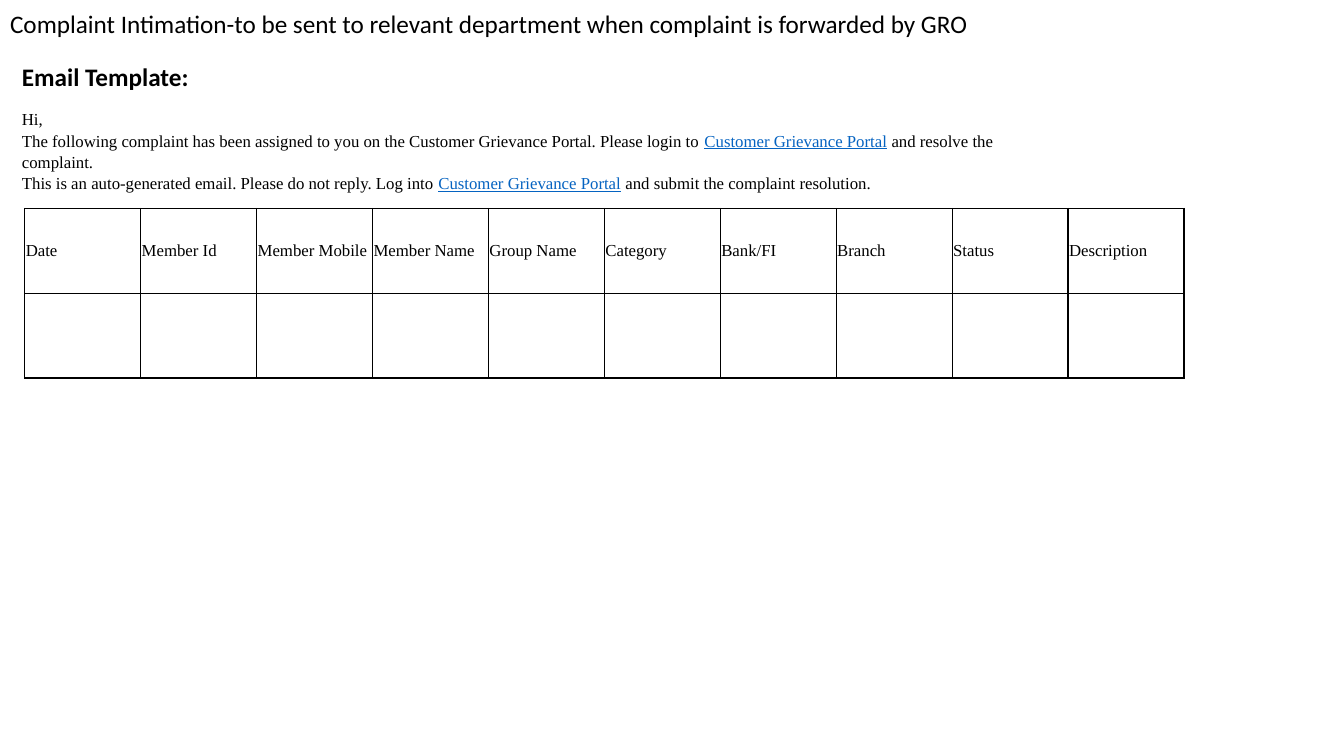
from pptx import Presentation
from pptx.dml.color import RGBColor
from pptx.enum.text import MSO_ANCHOR as Anchor, MSO_AUTO_SIZE as AutoSize, PP_ALIGN as Align
from pptx.oxml import parse_xml
from pptx.oxml.ns import nsdecls
from pptx.util import Pt

BLACK, LINK_BLUE = "000000", "0563C1"
HEADING_FONT, BODY_FONT = "Calibri", "Times New Roman"
PORTAL = "Customer Grievance Portal"
EMAIL = [
    ["Hi,"],
    ["The following complaint has been assigned to you on the Customer Grievance Portal. "
     "Please login to ", PORTAL, "\N{NO-BREAK SPACE}and resolve the complaint."],
    ["This is an auto-generated email. Please do not reply. Log into ", PORTAL,
     " and submit the complaint resolution."],
]
COLUMNS = ["Date", "Member Id", "Member Mobile", "Member Name", "Group Name",
           "Category", "Bank/FI", "Branch", "Status", "Description"]


def color(hex_code):
    return RGBColor.from_string(hex_code)


def format_span(span, font, size, hex_code=BLACK, bold=False, underline=False):
    span.font.name = font
    span.font.size = Pt(size)
    span.font.color.rgb = color(hex_code)
    span.font.bold = bold
    span.font.underline = underline


def place(shape, left, top, width, height):
    shape.left, shape.top = Pt(left), Pt(top)
    shape.width, shape.height = Pt(width), Pt(height)


def write_heading(shape, text, bold=False):
    frame = shape.text_frame
    frame.text = text
    frame.word_wrap = True
    frame.auto_size = AutoSize.NONE
    frame.vertical_anchor = Anchor.TOP
    para = frame.paragraphs[0]
    para.alignment = Align.LEFT
    para.line_spacing = 0.9
    para.space_before = Pt(0)
    format_span(para.runs[0], HEADING_FONT, 18, bold=bold)


def add_email(slide, left, top, width, height):
    frame = slide.shapes.add_textbox(Pt(left), Pt(top), Pt(width), Pt(height)).text_frame
    frame.word_wrap = True
    for index, parts in enumerate(EMAIL):
        para = frame.add_paragraph() if index else frame.paragraphs[0]
        para.line_spacing = 1.06
        for part in parts:
            span = para.add_run()
            span.text = part
            is_link = part == PORTAL
            format_span(span, BODY_FONT, 12, LINK_BLUE if is_link else BLACK,
                        underline=is_link)


def add_borders(cell):
    properties = cell._tc.get_or_add_tcPr()
    for position, side in enumerate(("lnL", "lnR", "lnT", "lnB")):
        properties.insert(position, parse_xml(
            f'<a:{side} {nsdecls("a")} w="{Pt(1)}"><a:solidFill>'
            f'<a:srgbClr val="{BLACK}"/></a:solidFill></a:{side}>'))


def add_complaint_table(slide, left, top, width, height):
    table = slide.shapes.add_table(2, len(COLUMNS), Pt(left), Pt(top),
                                   Pt(width), Pt(height)).table
    table.first_row = table.horz_banding = False
    for cell in table.iter_cells():
        cell.fill.background()
        cell.vertical_anchor = Anchor.MIDDLE
        cell.margin_left = cell.margin_right = Pt(0.75)
        cell.margin_top = cell.margin_bottom = Pt(0.75)
        add_borders(cell)
    for index, name in enumerate(COLUMNS):
        cell = table.cell(0, index)
        cell.text = name
        format_span(cell.text_frame.paragraphs[0].runs[0], BODY_FONT, 12)


def build_email_slide(deck):
    slide = deck.slides.add_slide(deck.slide_layouts[5])
    title = slide.shapes.title
    place(title, 0, 5, 840, 27.5)
    write_heading(title, "Complaint Intimation-to be sent to relevant department "
                         "when complaint is forwarded by GRO")
    subtitle = slide.shapes.add_textbox(Pt(8.6), Pt(42.5), Pt(164), Pt(27.5))
    write_heading(subtitle, "Email Template:", bold=True)
    add_email(slide, 8.6, 73.4, 761, 87)
    add_complaint_table(slide, 17.7, 149, 828, 121)


def main():
    deck = Presentation()
    deck.slide_width, deck.slide_height = Pt(960), Pt(540)
    build_email_slide(deck)
    deck.save("out.pptx")


if __name__ == "__main__":
    main()
